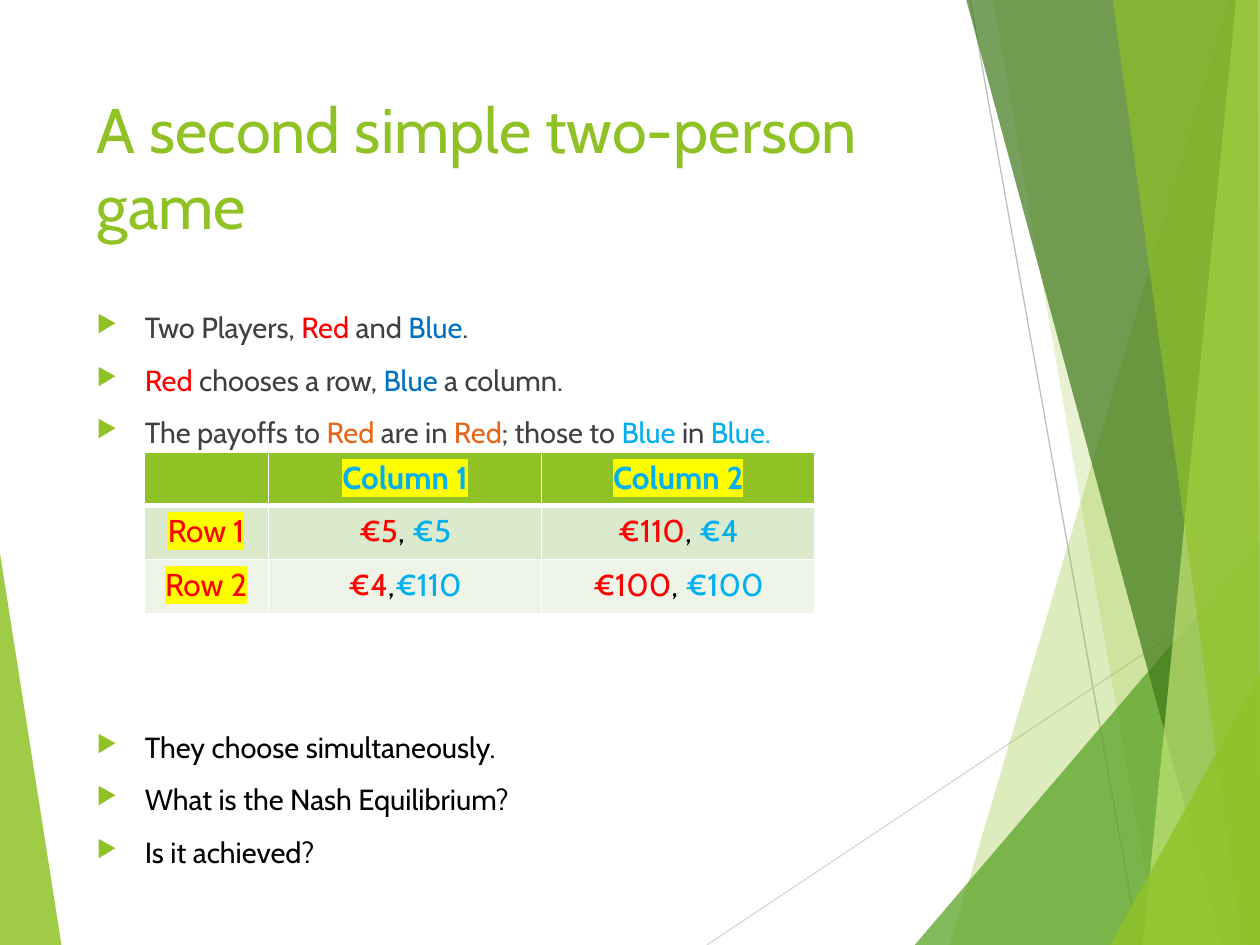
import pptx
import pptx.dml.color
import pptx.enum.shapes
import pptx.enum.text
import pptx.oxml.ns
import pptx.util
from lxml import etree

Cm, Pt, qn = pptx.util.Cm, pptx.util.Pt, pptx.oxml.ns.qn

FONT = "Cabin"
W, H = 25.4, 19.05
LEFT, TEXT_WIDTH = 1.7, 17.63
GREEN, GRAY, BLACK, WHITE = "90C226", "404040", "000000", "FFFFFF"
RED, ORANGE, BLUE, SKY, YELLOW = "FF0000", "E76618", "0070C0", "00B0F0", "FFFF00"

LEFT_WEDGE = [(0, 11.15), (1.24, H), (0, H)]
# (points, colour, opacity in percent), from back to front
RIGHT_FACETS = [
    ([(24.77, 0), (19.15, H), (W, H), (W, 0)], GREEN, 30),
    ([(20.02, 0), (23.34, H), (W, H), (W, 0)], GREEN, 20),
    ([(18.44, H), (W, 10.9), (W, H)], "54A021", 72),
    ([(19.48, 0), (24.64, H), (W, H), (W, 0)], "3F7819", 70),
    ([(24.92, 0), (23.04, H), (W, H), (W, 0)], "C0E474", 70),
    ([(22.43, 0), (25.04, H), (W, H), (25.35, 0)], GREEN, 65),
    ([(22.38, H), (W, 13.59), (W, H)], GREEN, 80),
]

RULES = [
    [("Two Players, ", GRAY), ("Red", RED), (" and ", GRAY), ("Blue", BLUE), (".", GRAY)],
    [("Red", RED), (" chooses a row, ", GRAY), ("Blue", BLUE), (" a column.", GRAY)],
    [("The payoffs to ", GRAY), ("Red", ORANGE), (" are in ", GRAY), ("Red", ORANGE),
     ("; those to ", GRAY), ("Blue", SKY), (" in ", GRAY), ("Blue.", SKY)],
]
QUESTIONS = [
    [("They choose simultaneously.", BLACK)],
    [("What is the Nash Equilibrium?", BLACK)],
    [("Is it achieved?", BLACK)],
]


def payoff(red, separator, blue):
    return [(red, RED), (separator, BLACK), (blue, SKY)]


PAYOFFS = [
    [[], [("Column 1", SKY)], [("Column 2", SKY)]],
    [[("Row 1", RED)], payoff("€5", ", ", "€5"), payoff("€110", ", ", "€4")],
    [[("Row 2", RED)], payoff("€4", ",", "€110"), payoff("€100", ", ", "€100")],
]


def rgb(color):
    return pptx.dml.color.RGBColor.from_string(color)


def sub(parent, tag, **attrs):
    return etree.SubElement(parent, qn(tag), attrs)


def set_fill(target, color):
    target.fill.solid()
    target.fill.fore_color.rgb = rgb(color)


def add_facet(s, points, color, opacity):
    """Draw a translucent polygon without outline."""
    start, *rest = [(Cm(x), Cm(y)) for x, y in points]
    builder = s.shapes.build_freeform(*start)
    builder.add_line_segments(rest)
    sp = builder.convert_to_shape()
    sp.shadow.inherit = False
    sp.line.fill.background()
    set_fill(sp, color)
    sub(sp.fill._xPr.find(".//" + qn("a:srgbClr")), "a:alpha", val=str(opacity * 1000))


def add_line(s, x1, y1, x2, y2, color):
    line = s.shapes.add_connector(pptx.enum.shapes.MSO_CONNECTOR.STRAIGHT,
                                  Cm(x1), Cm(y1), Cm(x2), Cm(y2))
    line.line.color.rgb = rgb(color)
    line.line.width = Pt(0.75)
    sub(line._element.spPr, "a:effectLst")


def add_runs(p, runs, size, highlight=None):
    p.font.name = FONT
    p.font.size = Pt(size)
    for text, color in runs:
        r = p.add_run()
        r.text = text
        r.font.color.rgb = rgb(color)
        if highlight:
            mark = etree.Element(qn("a:highlight"))
            sub(mark, "a:srgbClr", val=highlight)
            r._r.rPr.find(qn("a:solidFill")).addnext(mark)


def add_text_box(s, top, height):
    tf = s.shapes.add_textbox(Cm(LEFT), Cm(top), Cm(TEXT_WIDTH), Cm(height)).text_frame
    tf.word_wrap = True
    return tf


def add_bullet_format(p):
    pPr = p._p.get_or_add_pPr()
    pPr.set("marL", str(Cm(0.97)))
    pPr.set("indent", str(-Cm(0.97)))
    sub(sub(pPr, "a:buClr"), "a:srgbClr", val=GREEN)
    sub(pPr, "a:buSzPct", val="80000")
    sub(pPr, "a:buChar", char="▶")


def add_bullets(s, top, items):
    tf = add_text_box(s, top, 3.6)
    for i, runs in enumerate(items):
        p = tf.add_paragraph() if i else tf.paragraphs[0]
        add_bullet_format(p)
        p.space_before = Pt(10)
        add_runs(p, runs, 16.6)


def set_borders(cell, top, bottom):
    """Give a cell white borders; they must stand before its fill."""
    tcPr = cell._tc.get_or_add_tcPr()
    widths = {"a:lnL": 1, "a:lnR": 1, "a:lnT": top, "a:lnB": bottom}
    for i, (tag, width) in enumerate(widths.items()):
        ln = etree.Element(qn(tag), w=str(Pt(width)))
        sub(sub(ln, "a:solidFill"), "a:srgbClr", val=WHITE)
        tcPr.insert(i, ln)


def add_payoff_table(s):
    widths, heights = [2.51, 5.51, 5.51], [1.07, 1.09, 1.09]
    table = s.shapes.add_table(3, 3, Cm(2.9), Cm(9.12),
                               Cm(sum(widths)), Cm(sum(heights))).table
    for column, width in zip(table.columns, widths):
        column.width = Cm(width)
    for i, (row, fill) in enumerate(zip(PAYOFFS, [GREEN, "DBE9CD", "EEF4E8"])):
        table.rows[i].height = Cm(heights[i])
        for j, runs in enumerate(row):
            cell = table.cell(i, j)
            set_fill(cell, fill)
            set_borders(cell, 3 if i == 1 else 1, 3 if i == 0 else 1)
            p = cell.text_frame.paragraphs[0]
            p.alignment = pptx.enum.text.PP_ALIGN.CENTER
            p.font.bold = i == 0
            add_runs(p, runs, 18, YELLOW if i == 0 or j == 0 else None)


def main():
    prs = pptx.Presentation()
    prs.slide_width, prs.slide_height = Cm(W), Cm(H)
    s = prs.slides.add_slide(prs.slide_layouts[6])

    add_facet(s, LEFT_WEDGE, GREEN, 85)
    add_line(s, 14.25, H, W, 11.62, "D9D9D9")
    add_line(s, 19.56, 0, 22.96, H, "BFBFBF")
    for points, color, opacity in RIGHT_FACETS:
        add_facet(s, points, color, opacity)

    title = add_text_box(s, 1.7, 3.66)
    add_runs(title.paragraphs[0], [("A second simple two-person game", GREEN)], 36)
    add_bullets(s, 6.12, RULES)
    add_bullets(s, 14.58, QUESTIONS)
    add_payoff_table(s)
    prs.save("out.pptx")


if __name__ == "__main__":
    main()
